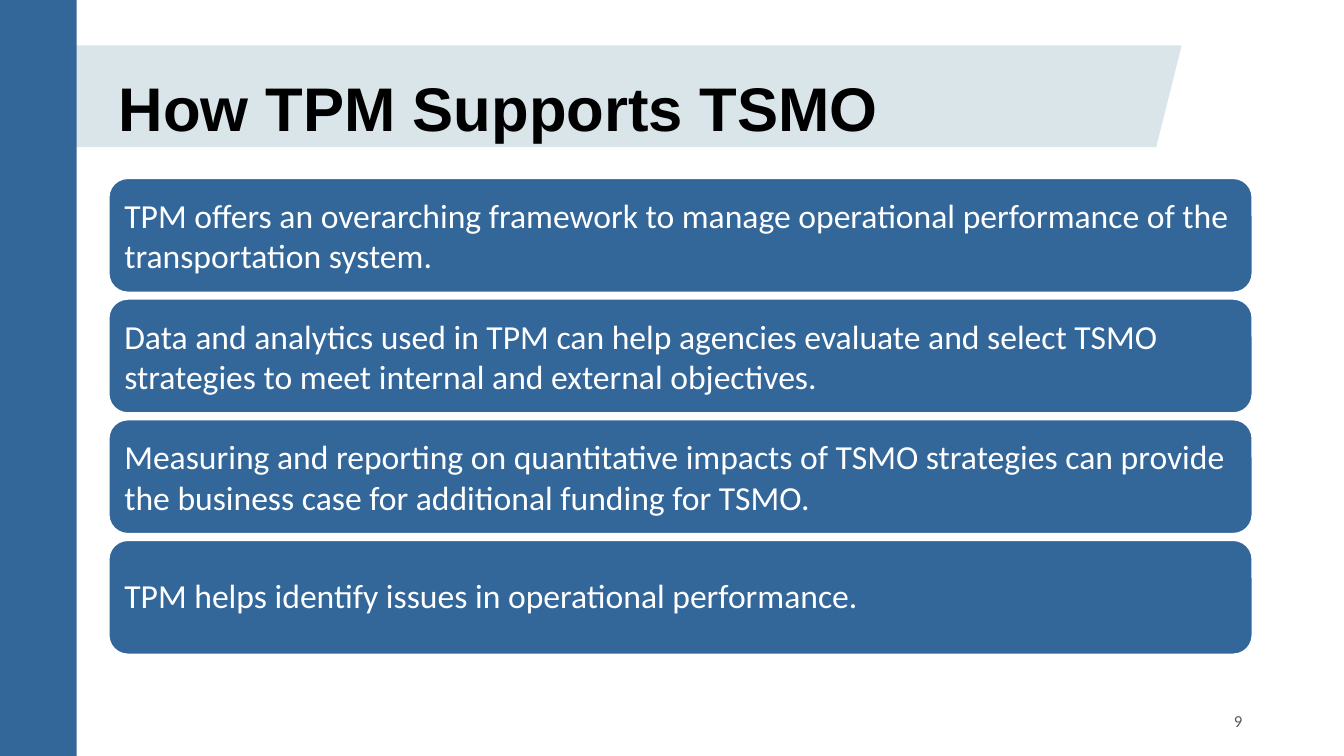
from dataclasses import dataclass
from typing import Optional

from pptx import Presentation
from pptx.dml.color import RGBColor
from pptx.enum.shapes import MSO_SHAPE as Preset
from pptx.enum.text import MSO_ANCHOR as Anchor, PP_ALIGN as Align
from pptx.util import Inches, Pt

BLUE, PALE, WHITE, BLACK, GREY = "336699", "DAE5EA", "FFFFFF", "000000", "595959"
LEFT, CARD_WIDTH, CARD_HEIGHT = 1.08, 11.34, 1.13
FIRST_TOP, CARD_STEP = 1.77, 1.197


@dataclass
class Box:
    left: float
    top: float
    width: float
    height: float


@dataclass
class Benefit:
    text: str
    line_spacing: Optional[float] = None


BENEFITS = [
    Benefit("TPM offers an overarching framework to manage operational "
            "performance of the transportation system."),
    Benefit("Data and analytics used in TPM can help agencies evaluate and "
            "select TSMO strategies to meet internal and external objectives."),
    Benefit("Measuring and reporting on quantitative impacts of TSMO strategies "
            "can provide the business case for additional funding for TSMO."),
    Benefit("TPM helps identify issues in operational performance.", 0.9),
]


def rgb(value: str) -> RGBColor:
    return RGBColor.from_string(value)


def place(box: Box) -> tuple:
    return tuple(Inches(v) for v in (box.left, box.top, box.width, box.height))


def add_panel(slide, preset, box: Box, fill: str, outline: Optional[str] = None):
    panel = slide.shapes.add_shape(preset, *place(box))
    panel.shadow.inherit = False
    panel.fill.solid()
    panel.fill.fore_color.rgb = rgb(fill)
    if outline:
        panel.line.color.rgb = rgb(outline)
        panel.line.width = Pt(1)
    else:
        panel.line.fill.background()
    return panel


def write(shape, text: str, color: str, font: dict, anchor=Anchor.MIDDLE,
          align=Align.LEFT, inset: float = 0.1,
          line_spacing: Optional[float] = None) -> None:
    frame = shape.text_frame
    frame_format = {
        "word_wrap": True, "vertical_anchor": anchor,
        "margin_left": Inches(0.1), "margin_right": Inches(0.1),
        "margin_top": Inches(inset), "margin_bottom": Inches(inset),
    }
    for name, value in frame_format.items():
        setattr(frame, name, value)
    paragraph = frame.paragraphs[0]
    paragraph.text = text
    paragraph.alignment = align
    paragraph.line_spacing = line_spacing
    for name, value in font.items():
        setattr(paragraph.font, name, value)
    paragraph.font.color.rgb = rgb(color)


def main() -> None:
    deck = Presentation()
    deck.slide_width, deck.slide_height = Inches(13.33), Inches(7.5)
    slide = deck.slides.add_slide(deck.slide_layouts[6])

    # Title band and side bar
    add_panel(slide, Preset.PARALLELOGRAM, Box(0.24, 0.45, 11.48, 1.01), PALE)
    add_panel(slide, Preset.RECTANGLE, Box(0, 0, 0.76, 7.5), BLUE)

    # Title
    title = slide.shapes.add_textbox(*place(Box(LEFT, 0.68, 9.84, 0.55)))
    write(title, "How TPM Supports TSMO", BLACK,
          {"name": "Arial", "size": Pt(44), "bold": True},
          anchor=Anchor.TOP, line_spacing=0.9)

    # Benefit cards
    for row, benefit in enumerate(BENEFITS):
        box = Box(LEFT, FIRST_TOP + row * CARD_STEP, CARD_WIDTH, CARD_HEIGHT)
        card = add_panel(slide, Preset.ROUNDED_RECTANGLE, box, BLUE, WHITE)
        write(card, benefit.text, WHITE, {"name": "Calibri", "size": Pt(24)},
              line_spacing=benefit.line_spacing)

    # Slide number
    number = slide.shapes.add_textbox(*place(Box(9.42, 6.95, 3, 0.4)))
    write(number, "9", GREY, {"name": "Calibri", "size": Pt(12)},
          align=Align.RIGHT, inset=0.05)

    deck.save("out.pptx")


if __name__ == "__main__":
    main()
